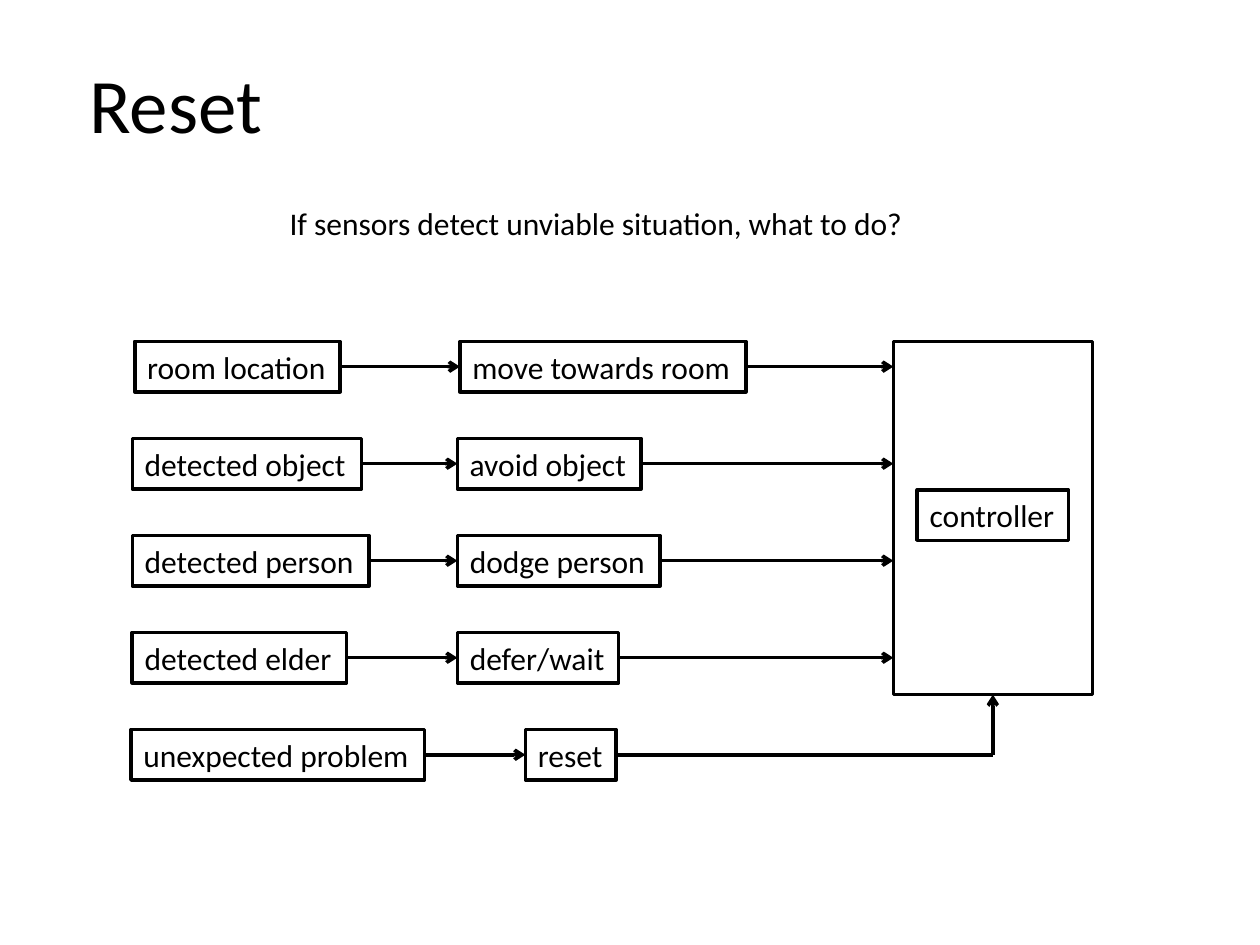
from lxml.etree import SubElement
from pptx import Presentation
from pptx.dml.color import RGBColor
from pptx.enum.shapes import MSO_CONNECTOR, MSO_SHAPE
from pptx.enum.text import MSO_ANCHOR, MSO_AUTO_SIZE, PP_ALIGN
from pptx.oxml.ns import qn
from pptx.util import Inches, Pt

COLUMN_WIDTH = 0.1
ROW_HEIGHT = 0.77
FIRST_ROW_TOP = 2.71
BOX_ROWS = 0.52
CENTRE_ROWS = BOX_ROWS / 2
INK = "000000"
LEFT_SITE, RIGHT_SITE = 1, 3

CONTROLLER_LEFT, CONTROLLER_WIDTH, CONTROLLER_ROWS = 70.9, 15.8, 3.64
BEHAVIOURS = [
    (("room location", 10.7, 16.3), ("move towards room", 36.5, 22.7)),
    (("detected object", 10.5, 18.2), ("avoid object", 36.3, 14.6)),
    (("detected person", 10.5, 18.8), ("dodge person", 36.3, 16.1)),
    (("detected elder", 10.5, 17), ("defer/wait", 36.3, 12.8)),
    (("unexpected problem", 10.4, 23.3), ("reset", 41.7, 7.2)),
]


def colour(value):
    return RGBColor.from_string(value)


def set_values(target, values):
    for name, value in values.items():
        setattr(target, name, value)


def across(columns):
    return Inches(columns * COLUMN_WIDTH)


def down(row):
    return Inches(FIRST_ROW_TOP + row * ROW_HEIGHT)


def area(column, row, columns, rows=BOX_ROWS):
    return across(column), down(row), across(columns), Inches(rows * ROW_HEIGHT)


def write(shape, text, size=18, wrap=False):
    frame = shape.text_frame
    frame.text = text
    set_values(frame, {
        "word_wrap": wrap,
        "auto_size": MSO_AUTO_SIZE.SHAPE_TO_FIT_TEXT,
        "vertical_anchor": MSO_ANCHOR.TOP,
    })
    paragraph = frame.paragraphs[0]
    paragraph.alignment = PP_ALIGN.LEFT
    font = paragraph.runs[0].font
    set_values(font, {"name": "Calibri", "size": Pt(size)})
    font.color.rgb = colour(INK)


def draw_line(line):
    line.width = Pt(2)
    line.color.rgb = colour(INK)


def add_box(shapes, box_area, text=None):
    shape = shapes.add_shape(MSO_SHAPE.RECTANGLE, *box_area)
    shape.shadow.inherit = False
    shape.fill.background()
    draw_line(shape.line)
    if text:
        write(shape, text)
    return shape


def add_line(shapes, start, end, arrow=True):
    connector = shapes.add_connector(
        MSO_CONNECTOR.STRAIGHT,
        across(start[0]), down(start[1]), across(end[0]), down(end[1]))
    draw_line(connector.line)
    properties = connector._element.spPr
    if arrow:
        SubElement(properties.find(qn("a:ln")), qn("a:tailEnd"), type="arrow")
    SubElement(properties, qn("a:effectLst"))
    return connector


def add_behaviour(slide, row, sensor, action):
    shapes = slide.shapes.add_group_shape().shapes
    boxes = [add_box(shapes, area(column, row, columns), text)
             for text, column, columns in (sensor, action)]
    centre = row + CENTRE_ROWS
    connector = add_line(shapes, (sensor[1] + sensor[2], centre), (action[1], centre))
    connector.begin_connect(boxes[0], RIGHT_SITE)
    connector.end_connect(boxes[1], LEFT_SITE)
    return action[1] + action[2], centre


def add_title(slide, text):
    title = slide.shapes.title
    set_values(title, dict(zip(
        ("left", "top", "width", "height"), area(6.1, -3, 15.8, 1.09))))
    write(title, text, size=44)


def main():
    presentation = Presentation()
    set_values(presentation, {"slide_width": Inches(10), "slide_height": Inches(7.5)})
    slide = presentation.slides.add_slide(presentation.slide_layouts[5])
    shapes = slide.shapes

    add_title(slide, "Reset")
    question = shapes.add_textbox(*area(22, -1.48, 56))
    write(question, "If sensors detect unviable situation, what to do?", wrap=True)

    add_box(shapes, area(CONTROLLER_LEFT, 0, CONTROLLER_WIDTH, CONTROLLER_ROWS))
    add_box(shapes, area(72.8, 1.53, 12), "controller")

    exits = [add_behaviour(slide, row, *boxes) for row, boxes in enumerate(BEHAVIOURS)]
    for start in exits[:-1]:
        add_line(shapes, start, (CONTROLLER_LEFT, start[1]))

    reset_exit = exits[-1]
    corner = (CONTROLLER_LEFT + CONTROLLER_WIDTH / 2, reset_exit[1])
    add_line(shapes, reset_exit, corner, arrow=False)
    add_line(shapes, corner, (corner[0], CONTROLLER_ROWS))

    presentation.save("out.pptx")


if __name__ == "__main__":
    main()
